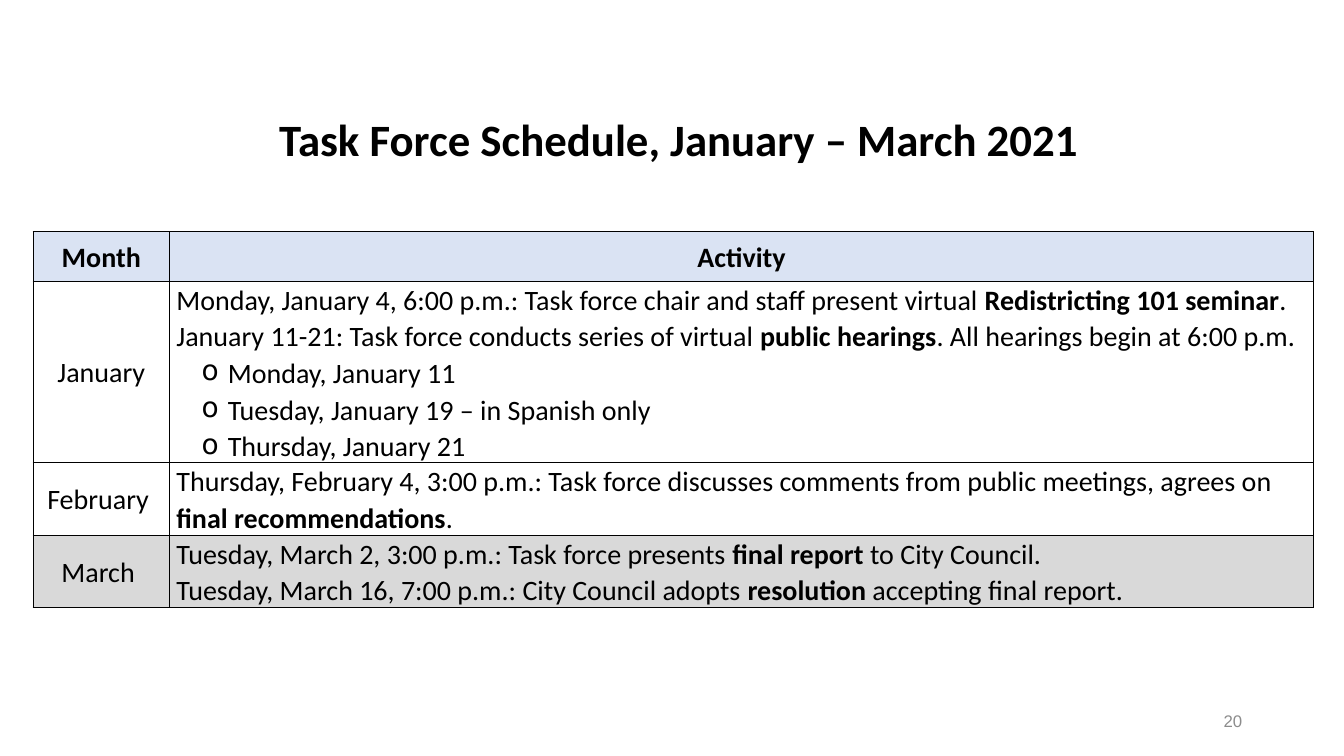
from lxml.etree import SubElement
from pptx import Presentation
from pptx.dml.color import RGBColor
from pptx.enum.text import MSO_ANCHOR, PP_ALIGN
from pptx.oxml.ns import qn
from pptx.util import Inches, Pt

BLACK = RGBColor(0x00, 0x00, 0x00)
GRAY = RGBColor(0x8C, 0x8C, 0x8C)
HEADER_BLUE = RGBColor(0xDA, 0xE3, 0xF3)
MARCH_GRAY = RGBColor(0xD9, 0xD9, 0xD9)

HEADER_HEIGHT = 0.49
LINE_HEIGHT = 0.36
COLUMN_WIDTHS = (1.35, 11.35)

# Month, activity lines (** marks bold, a leading "o " a bullet), text lines, fill
SCHEDULE = [
    ("January", [
        "Monday, January 4, 6:00 p.m.: Task force chair and staff present virtual "
        "**Redistricting 101 seminar**.",
        "January 11-21: Task force conducts series of virtual **public hearings**. "
        "All hearings begin at 6:00 p.m.",
        "o Monday, January 11",
        "o Tuesday, January 19 – in Spanish only",
        "o Thursday, January 21",
    ], 5, None),
    ("February ", [
        "Thursday, February 4, 3:00 p.m.: Task force discusses comments from public "
        "meetings, agrees on **final recommendations**.",
    ], 2, None),
    ("March ", [
        "Tuesday, March 2, 3:00 p.m.: Task force presents **final report **to City Council.",
        "Tuesday, March 16, 7:00 p.m.: City Council adopts **resolution** "
        "accepting final report.",
    ], 2, MARCH_GRAY),
]


def add_bullet(paragraph):
    properties = paragraph._p.get_or_add_pPr()
    properties.set("marL", str(Inches(0.51)))
    properties.set("indent", str(Inches(-0.26)))
    SubElement(properties, qn("a:buChar")).set("char", "o")


def write(frame, lines, size=20, font="Calibri", color=BLACK, bold=False,
          align=PP_ALIGN.LEFT, spacing=1.07):
    for number, line in enumerate(lines):
        paragraph = frame.add_paragraph() if number else frame.paragraphs[0]
        if line.startswith("o "):
            add_bullet(paragraph)
            line = line[2:]
        paragraph.alignment = align
        paragraph.line_spacing = spacing
        for part, words in enumerate(line.split("**")):
            run = paragraph.add_run()
            run.text = words
            run.font.size = Pt(size)
            run.font.name = font
            run.font.color.rgb = color
            run.font.bold = bold or part % 2 == 1


def add_borders(cell):
    properties = cell._tc.get_or_add_tcPr()
    for side in ("a:lnL", "a:lnR", "a:lnT", "a:lnB"):
        border = SubElement(properties, qn(side), w=str(Pt(1)))
        fill = SubElement(border, qn("a:solidFill"))
        SubElement(fill, qn("a:srgbClr")).set("val", str(BLACK))


def fill_cell(cell, lines, fill, **text_format):
    cell.margin_left = cell.margin_right = Inches(0.07)
    cell.margin_top = cell.margin_bottom = 0
    cell.vertical_anchor = MSO_ANCHOR.MIDDLE
    add_borders(cell)
    if fill is None:
        cell.fill.background()
    else:
        cell.fill.solid()
        cell.fill.fore_color.rgb = fill
    write(cell.text_frame, lines, **text_format)


def place_title(slide, left, top, width, height):
    title = slide.shapes.title
    title.left, title.top = Inches(left), Inches(top)
    title.width, title.height = Inches(width), Inches(height)
    title.text_frame.vertical_anchor = MSO_ANCHOR.MIDDLE
    write(title.text_frame, ["Task Force Schedule, January – March 2021"],
          size=32, bold=True, align=PP_ALIGN.CENTER, spacing=0.9)


def place_schedule(slide, left, top):
    heights = [HEADER_HEIGHT] + [LINE_HEIGHT * count for _, _, count, _ in SCHEDULE]
    schedule = slide.shapes.add_table(
        len(heights), len(COLUMN_WIDTHS), Inches(left), Inches(top),
        Inches(sum(COLUMN_WIDTHS)), Inches(sum(heights))).table
    for column, width in zip(schedule.columns, COLUMN_WIDTHS):
        column.width = Inches(width)
    for row, height in zip(schedule.rows, heights):
        row.height = Inches(height)

    # Header row
    for column, heading in enumerate(("Month", "Activity")):
        fill_cell(schedule.cell(0, column), [heading], HEADER_BLUE,
                  bold=True, align=PP_ALIGN.CENTER)

    # One row per month
    for row, (month, activities, _, fill) in enumerate(SCHEDULE, start=1):
        fill_cell(schedule.cell(row, 0), [month], fill, align=PP_ALIGN.CENTER)
        fill_cell(schedule.cell(row, 1), activities, fill)


def place_page_number(slide, left, top, width, height):
    page_number = slide.shapes.add_textbox(
        Inches(left), Inches(top), Inches(width), Inches(height))
    frame = page_number.text_frame
    frame.word_wrap = True
    frame.vertical_anchor = MSO_ANCHOR.MIDDLE
    write(frame, ["20"], size=12, font="Arial", color=GRAY,
          align=PP_ALIGN.RIGHT, spacing=1.0)


def main():
    presentation = Presentation()
    presentation.slide_width = Inches(13.33)
    presentation.slide_height = Inches(7.5)
    slide = presentation.slides.add_slide(presentation.slide_layouts[5])
    place_title(slide, 0.43, 1.1, 12.61, 0.61)
    place_page_number(slide, 9.42, 6.95, 3, 0.4)
    place_schedule(slide, 0.33, 2.3)
    presentation.save("out.pptx")


if __name__ == "__main__":
    main()
